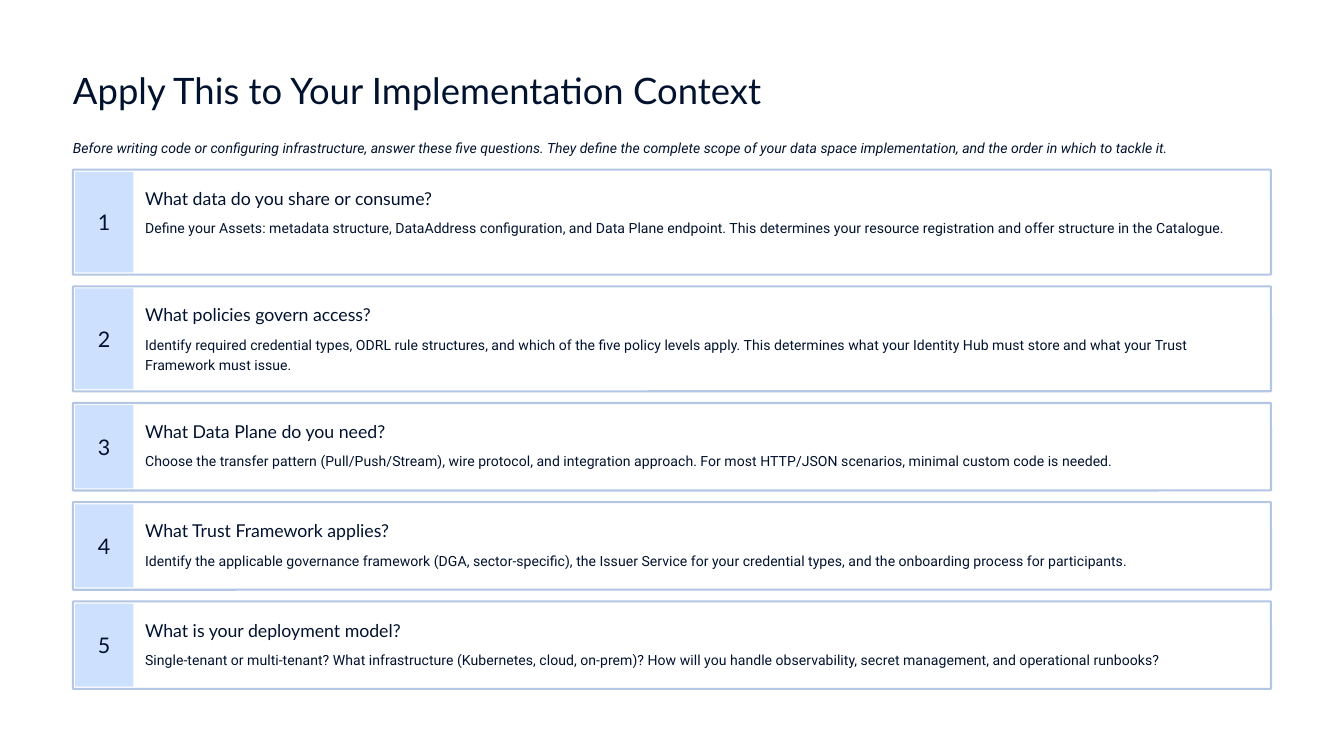
from dataclasses import dataclass

import pptx
import pptx.dml.color
import pptx.enum.shapes
import pptx.enum.text
import pptx.util

SHAPE = pptx.enum.shapes.MSO_SHAPE
ALIGN = pptx.enum.text.PP_ALIGN
ANCHOR = pptx.enum.text.MSO_ANCHOR


def rgb(value):
    return pptx.dml.color.RGBColor.from_string(value)


@dataclass(frozen=True)
class Theme:
    paper: str = "FFFFFF"
    ink: str = "01122E"
    border: str = "B3C6E4"
    badge: str = "CDE0FE"
    border_width: float = 1.12
    title = {"name": "Lato", "size": 19.5}
    number = {"name": "Lato", "size": 11.5}
    heading = {"name": "Lato", "size": 9.5}
    body = {"name": "Roboto", "size": 7.5}
    intro = {"name": "Roboto", "size": 7.5, "italic": True}
    heading_spacing: float = 1.04
    body_spacing: float = 1.2


class Deck:
    """Draws on a grid of 100 columns by 56.25 rows with square cells."""

    columns, rows = 100, 56.25

    def __init__(self, theme):
        self.theme = theme
        self.prs = pptx.Presentation()
        self.cell = pptx.util.Inches(0.1)
        self.prs.slide_width = self.columns * self.cell
        self.prs.slide_height = int(self.rows * self.cell)
        self.s = self.prs.slides.add_slide(self.prs.slide_layouts[6])
        fill = self.s.background.fill
        fill.solid()
        fill.fore_color.rgb = rgb(theme.paper)

    def place(self, *cells):
        return [round(c * self.cell) for c in cells]

    def box(self, kind, x, y, w, h, fill, line=None):
        sp = self.s.shapes.add_shape(kind, *self.place(x, y, w, h))
        sp.shadow.inherit = False
        sp.fill.solid()
        sp.fill.fore_color.rgb = rgb(fill)
        if line:
            sp.line.color.rgb = rgb(line)
            sp.line.width = pptx.util.Pt(self.theme.border_width)
        else:
            sp.line.fill.background()
        return sp

    def text(self, x, y, w, h, words, style, spacing=1.0,
             align=ALIGN.LEFT, anchor=ANCHOR.TOP):
        tf = self.s.shapes.add_textbox(*self.place(x, y, w, h)).text_frame
        frame = {"margin_left": 0, "margin_top": 0, "margin_right": 0,
                 "margin_bottom": 0, "word_wrap": True,
                 "vertical_anchor": anchor}
        for name, value in frame.items():
            setattr(tf, name, value)
        p = tf.paragraphs[0]
        p.alignment, p.line_spacing = align, spacing
        r = p.add_run()
        r.text = words
        for name, value in {**style, "size": pptx.util.Pt(style["size"])}.items():
            setattr(r.font, name, value)
        r.font.color.rgb = rgb(self.theme.ink)

    def card(self, top, height, number, heading, heading_width, body, body_height):
        t = self.theme
        card = self.box(SHAPE.ROUNDED_RECTANGLE, LEFT, top, CARD_WIDTH, height,
                        t.paper, t.border)
        card.adjustments[0] = 0.06 / height
        self.box(SHAPE.RECTANGLE, LEFT + INSET, top + INSET, 4.34,
                 height - 2 * INSET, t.badge)
        self.text(LEFT + 1.52, top + height / 2 - 1, 1.6, 2, str(number), t.number,
                  align=ALIGN.CENTER, anchor=ANCHOR.MIDDLE)
        self.text(LEFT + 5.37, top + 1.27, heading_width, 1.7, heading, t.heading,
                  t.heading_spacing)
        self.text(LEFT + 5.37, top + 3.46, 82.5, body_height, body, t.body,
                  t.body_spacing)


LEFT, CARD_WIDTH = 5.43, 89.14
FIRST_TOP, GAP, INSET = 12.63, 0.87, 0.16
TALL, SHORT = (7.81, 3.1), (6.51, 1.6)  # card height, body height

QUESTIONS = [
    (TALL, "What data do you share or consume?", 23.7,
     "Define your Assets: metadata structure, DataAddress configuration, and Data Plane "
     "endpoint. This determines your resource registration and offer structure in the "
     "Catalogue."),
    (TALL, "What policies govern access?", 18.6,
     "Identify required credential types, ODRL rule structures, and which of the five "
     "policy levels apply. This determines what your Identity Hub must store and what "
     "your Trust Framework must issue."),
    (SHORT, "What Data Plane do you need?", 19.5,
     "Choose the transfer pattern (Pull/Push/Stream), wire protocol, and integration "
     "approach. For most HTTP/JSON scenarios, minimal custom code is needed."),
    (SHORT, "What Trust Framework applies?", 20.1,
     "Identify the applicable governance framework (DGA, sector-specific), the Issuer "
     "Service for your credential types, and the onboarding process for participants."),
    (SHORT, "What is your deployment model?", 20.5,
     "Single-tenant or multi-tenant? What infrastructure (Kubernetes, cloud, on-prem)? "
     "How will you handle observability, secret management, and operational runbooks?"),
]


def main():
    theme = Theme()
    deck = Deck(theme)
    deck.text(LEFT, 4.96, 59.1, 3.4, "Apply This to Your Implementation Context",
              theme.title, theme.heading_spacing)
    deck.text(LEFT, 10.13, 94.1, 1.6,
              "Before writing code or configuring infrastructure, answer these five "
              "questions. They define the complete scope of your data space "
              "implementation, and the order in which to tackle it.",
              theme.intro, theme.body_spacing)
    top = FIRST_TOP
    for number, (size, heading, width, body) in enumerate(QUESTIONS, 1):
        height, body_height = size
        deck.card(top, height, number, heading, width, body, body_height)
        top += height + GAP
    deck.prs.save("out.pptx")


if __name__ == "__main__":
    main()
